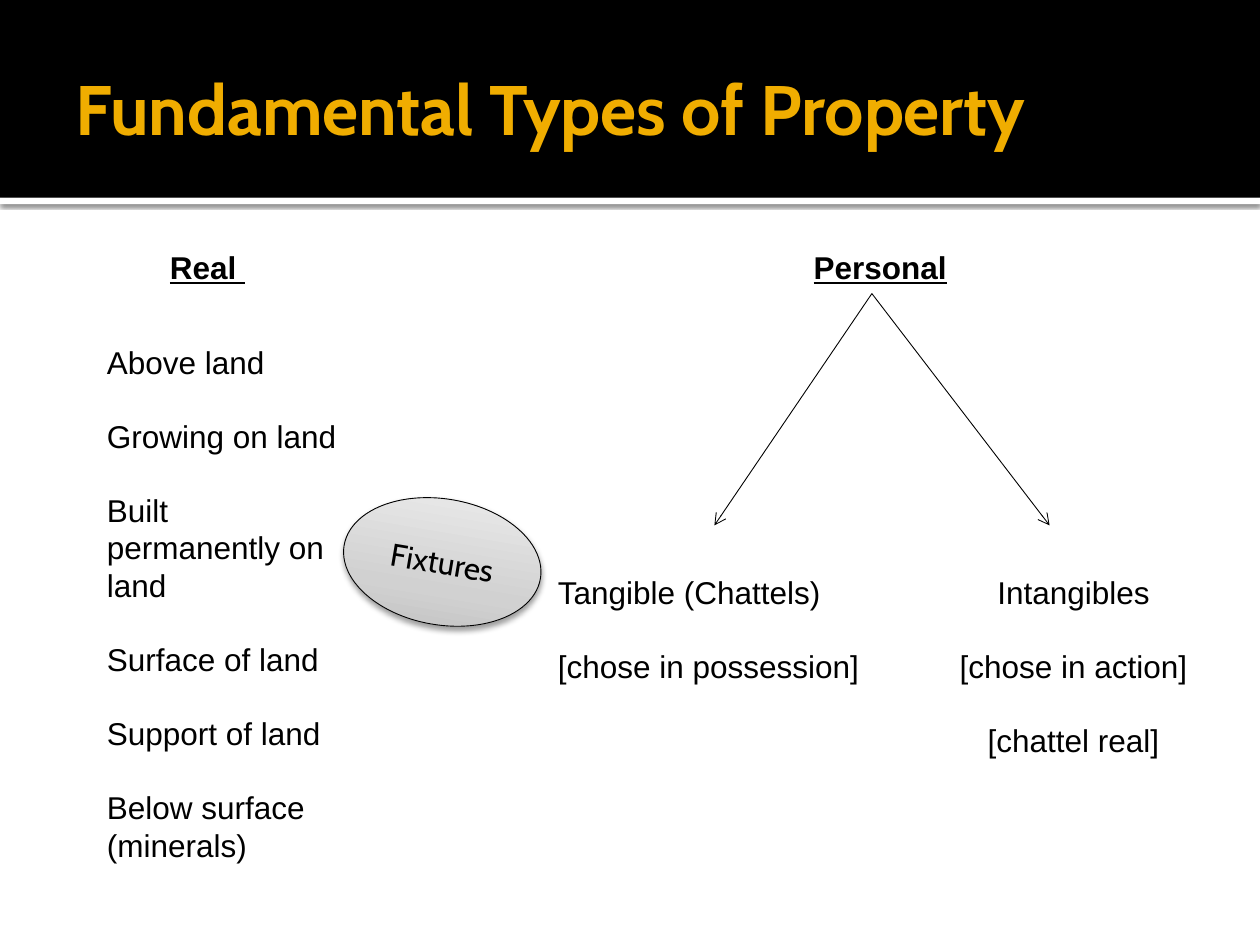
from copy import deepcopy
from typing import NamedTuple

from lxml.etree import SubElement
from pptx import Presentation
from pptx.dml.color import RGBColor
from pptx.enum.shapes import MSO_CONNECTOR as Connector, MSO_SHAPE as Shape
from pptx.enum.text import MSO_ANCHOR as Anchor, PP_ALIGN as Align
from pptx.oxml.ns import qn
from pptx.util import Inches, Pt

BLACK, WHITE, GOLD = "000000", "FFFFFF", "F0AD00"
LINE_HEIGHT = 20.7  # one line of 18 pt Arial, in points


class TextBlock(NamedTuple):
    left: float
    top: float
    width: float
    height: float
    paragraphs: list[str]
    align: Align = Align.LEFT
    heading: bool = False


class Arrow(NamedTuple):
    start: tuple[float, float]
    end: tuple[float, float]


BLOCKS = [
    TextBlock(1.25, 1.92, 1.5, 0.4, ["Real "], heading=True),
    TextBlock(6.36, 1.92, 1.5, 0.4, ["Personal"], heading=True),
    TextBlock(0.75, 2.67, 2.08, 4.95, [
        "Above land", "Growing on land", "Built permanently on land",
        "Surface of land", "Support of land", "Below surface (minerals)"]),
    TextBlock(4.33, 4.5, 2.8, 1, ["Tangible (Chattels)", "[chose in possession]"]),
    TextBlock(7.42, 4.5, 2.2, 1.62,
              ["Intangibles", "[chose in action]", "[chattel real]"], Align.CENTER),
]
PERSONAL_FOOT = (6.92, 2.33)
ARROWS = [Arrow(PERSONAL_FOOT, (5.67, 4.17)), Arrow(PERSONAL_FOOT, (8.33, 4.17))]
FIXTURES_GRADIENT = [(0, "BDBDBD"), (0.35, "D1D1D1"), (1, "EEEEEE")]


def color(value: str) -> RGBColor:
    return RGBColor.from_string(value)


def add_run(paragraph, text: str, font: str = "Arial", size: int = 18,
            text_color: str = BLACK, bold: bool = False, underline: bool = False) -> None:
    run = paragraph.add_run()
    run.text = text
    run.font.name = font
    run.font.size = Pt(size)
    run.font.bold = bold
    run.font.underline = underline
    run.font.color.rgb = color(text_color)


def add_shadow(shape, opacity: int, blur: float, distance: float) -> None:
    """Give the shape a black shadow that falls straight down."""
    shape.shadow.inherit = False
    effects = shape._element.spPr.find(qn("a:effectLst"))
    shadow = SubElement(effects, qn("a:outerShdw"), blurRad=str(Pt(blur)),
                        dist=str(Pt(distance)), dir="5400000", rotWithShape="0")
    shade = SubElement(shadow, qn("a:srgbClr"), val=BLACK)
    SubElement(shade, qn("a:alpha"), val=str(opacity * 1000))


def add_band(slide, top: float, height: float, fill: str):
    band = slide.shapes.add_shape(
        Shape.RECTANGLE, 0, Inches(top), Inches(10), Inches(height))
    band.fill.solid()
    band.fill.fore_color.rgb = color(fill)
    band.line.fill.background()
    band.shadow.inherit = False
    return band


def add_title(slide, text: str) -> None:
    title = slide.shapes.title
    title.left, title.top = Inches(0.5), Inches(0.17)
    title.width, title.height = Inches(9), Inches(1.37)
    frame = title.text_frame
    frame.vertical_anchor = Anchor.MIDDLE
    frame.margin_left = Inches(0.1)
    frame.margin_right = frame.margin_top = frame.margin_bottom = Inches(0.05)
    frame.paragraphs[0].alignment = Align.LEFT
    add_run(frame.paragraphs[0], text, "Cabin", 40, GOLD, bold=True)
    slide.shapes._spTree.append(title._element)  # in front of the bands


def add_text_block(slide, block: TextBlock) -> None:
    box = slide.shapes.add_textbox(Inches(block.left), Inches(block.top),
                                   Inches(block.width), Inches(block.height))
    frame = box.text_frame
    frame.word_wrap = True
    for index, text in enumerate(block.paragraphs):
        paragraph = frame.add_paragraph() if index else frame.paragraphs[0]
        paragraph.alignment = block.align
        paragraph.space_before = Pt(LINE_HEIGHT if index else 0)
        add_run(paragraph, text, bold=block.heading, underline=block.heading)


def add_arrow(slide, arrow: Arrow) -> None:
    connector = slide.shapes.add_connector(
        Connector.STRAIGHT, *map(Inches, arrow.start + arrow.end))
    connector.line.color.rgb = color(BLACK)
    connector.line.width = Pt(0.5)
    SubElement(connector.line._get_or_add_ln(), qn("a:tailEnd"), type="arrow")
    SubElement(connector._element.spPr, qn("a:effectLst"))


def add_fixtures(slide) -> None:
    ellipse = slide.shapes.add_shape(
        Shape.OVAL, Inches(2.72), Inches(3.96), Inches(1.58), Inches(1))
    ellipse.rotation = 9.6
    ellipse.fill.gradient()
    ellipse.fill.gradient_angle = 90
    stop_list = ellipse._element.spPr.find(qn("a:gradFill")).find(qn("a:gsLst"))
    stop_list.append(deepcopy(stop_list[0]))
    for stop, (position, value) in zip(ellipse.fill.gradient_stops, FIXTURES_GRADIENT):
        stop.position = position
        stop.color.rgb = color(value)
    ellipse.line.color.rgb = color(BLACK)
    ellipse.line.width = Pt(0.5)
    add_shadow(ellipse, opacity=38, blur=3.5, distance=2)
    ellipse.text_frame.vertical_anchor = Anchor.MIDDLE
    paragraph = ellipse.text_frame.paragraphs[0]
    paragraph.alignment = Align.CENTER
    add_run(paragraph, "Fixtures", "Cabin")


def main() -> None:
    presentation = Presentation()
    presentation.slide_width, presentation.slide_height = Inches(10), Inches(7.5)
    slide = presentation.slides.add_slide(presentation.slide_layouts[5])
    rule = add_band(slide, 1.57, 0.05, WHITE)
    add_shadow(rule, opacity=60, blur=2.5, distance=0.8)
    add_band(slide, 0, 1.57, BLACK)
    add_title(slide, "Fundamental Types of Property")
    for arrow in ARROWS:
        add_arrow(slide, arrow)
    for block in BLOCKS:
        add_text_block(slide, block)
    add_fixtures(slide)
    presentation.save("out.pptx")


if __name__ == "__main__":
    main()
